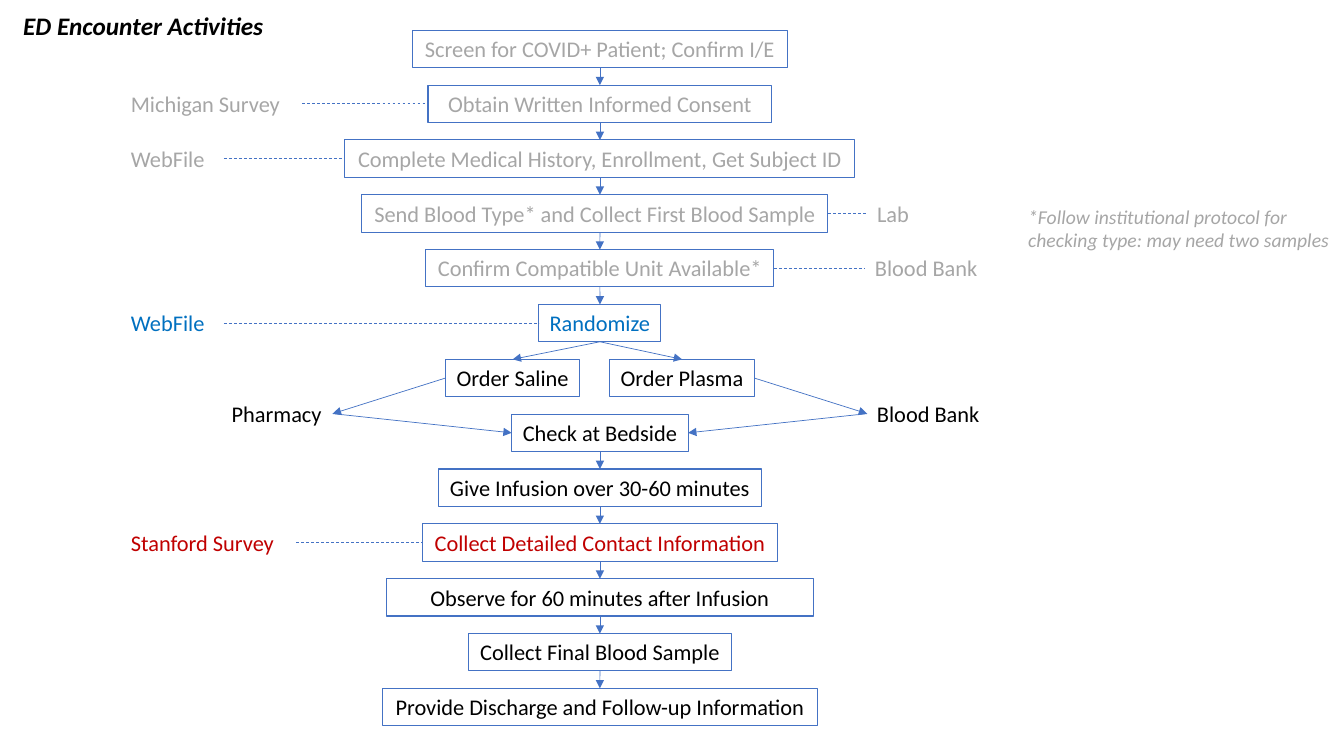
from dataclasses import dataclass
from itertools import pairwise

from lxml.etree import SubElement
from pptx import Presentation
from pptx.dml.color import RGBColor
from pptx.enum.dml import MSO_LINE
from pptx.enum.shapes import MSO_CONNECTOR, MSO_SHAPE
from pptx.enum.text import MSO_ANCHOR, MSO_AUTO_SIZE, PP_ALIGN
from pptx.oxml.ns import qn
from pptx.util import Inches, Pt


@dataclass(frozen=True)
class Theme:
    font: str = "Calibri"
    title_size: int = 18
    body_size: int = 16
    note_size: int = 14
    line: str = "4472C4"
    black: str = "000000"
    grey: str = "A6A6A6"
    blue: str = "0070C0"
    red: str = "C00000"


@dataclass(frozen=True)
class Box:
    left: float
    top: float
    width: float
    height: float

    def lengths(self):
        return [Inches(n) for n in (self.left, self.top, self.width, self.height)]


THEME = Theme()
TOP, LEFT, BOTTOM, RIGHT = range(4)  # connection sites of a rectangle
ROWS = 13
ROW_HEIGHT = 0.37

# Main column: key -> row, width, text, colour
STEPS = {
    "screen": (0, 3.72, "Screen for COVID+ Patient; Confirm I/E", THEME.grey),
    "consent": (1, 3.41, "Obtain Written Informed Consent", THEME.grey),
    "history": (2, 5.06, "Complete Medical History, Enrollment, Get Subject ID", THEME.grey),
    "sample": (3, 4.62, "Send Blood Type* and Collect First Blood Sample", THEME.grey),
    "unit": (4, 3.45, "Confirm Compatible Unit Available*", THEME.grey),
    "randomize": (5, 1.21, "Randomize", THEME.blue),
    "check": (7, 1.75, "Check at Bedside", THEME.black),
    "infusion": (8, 3.21, "Give Infusion over 30-60 minutes", THEME.black),
    "contact": (9, 3.52, "Collect Detailed Contact Information", THEME.red),
    "observe": (10, 4.23, "Observe for 60 minutes after Infusion", THEME.black),
    "final": (11, 2.61, "Collect Final Blood Sample", THEME.black),
    "discharge": (12, 4.31, "Provide Discharge and Follow-up Information", THEME.black),
}
SHIFTS = {"sample": -0.05}  # steps that sit off the axis
# Labels beside a step: step, offset from the chart's left, width, text
SIDE_LABELS = [
    ("consent", 0, 1.8, "Michigan Survey"),
    ("history", 0, 1.02, "WebFile"),
    ("sample", 7.4, 0.52, "Lab"),
    ("unit", 7.38, 1.23, "Blood Bank"),
    ("randomize", 0, 1.02, "WebFile"),
    ("contact", 0, 1.74, "Stanford Survey"),
]
# Two arms: order offset, width, text; supplier offset, width, text; outer side
ORDER_ROW, SUPPLIER_ROW = 6, 6.65
ARMS = [
    ((3.22, 1.33, "Order Saline"), (1.0, 1.1, "Pharmacy"), LEFT),
    ((4.85, 1.43, "Order Plasma"), (7.4, 1.23, "Blood Bank"), RIGHT),
]


def write(shape, text, color, size=THEME.body_size, align=PP_ALIGN.LEFT, wrap=False):
    frame = shape.text_frame
    frame.text = text
    frame.word_wrap = wrap
    frame.auto_size = MSO_AUTO_SIZE.SHAPE_TO_FIT_TEXT
    frame.vertical_anchor = MSO_ANCHOR.TOP
    paragraph = frame.paragraphs[0]
    paragraph.alignment = align
    paragraph.font.name = THEME.font
    paragraph.font.size = Pt(size)
    paragraph.font.color.rgb = RGBColor.from_string(color)
    return paragraph


def add_step(slide, box, text, color):
    shape = slide.shapes.add_shape(MSO_SHAPE.RECTANGLE, *box.lengths())
    shape.shadow.inherit = False
    shape.fill.background()
    shape.line.color.rgb = RGBColor.from_string(THEME.line)
    shape.line.width = Pt(0.75)
    write(shape, text, color, align=PP_ALIGN.CENTER)
    return shape


def add_label(slide, box, text, color):
    label = slide.shapes.add_textbox(*box.lengths())
    write(label, text, color)
    return label


def join(slide, start, start_site, end, end_site, dashed=False, axis=None):
    """Arrow or dashed line; with an axis, shapes off it are met on the axis."""

    def off_axis(shape):
        return axis is not None and abs(shape.left + shape.width / 2 - axis) > Inches(0.02)

    connector = slide.shapes.add_connector(MSO_CONNECTOR.STRAIGHT, 0, 0, 0, 0)
    if off_axis(start):
        connector.begin_x, connector.begin_y = axis, start.top + start.height
    else:
        connector.begin_connect(start, start_site)
    if off_axis(end):
        connector.end_x, connector.end_y = axis, end.top
    else:
        connector.end_connect(end, end_site)
    connector.line.color.rgb = RGBColor.from_string(THEME.line)
    connector.line.width = Pt(0.5)
    properties = connector.element.spPr
    if dashed:
        connector.line.dash_style = MSO_LINE.DASH
    else:
        SubElement(properties.find(qn("a:ln")), qn("a:tailEnd"), type="triangle")
    SubElement(properties, qn("a:effectLst"))


def add_title(slide, box):
    title = slide.shapes.title
    title.left, title.top, title.width, title.height = box.lengths()
    paragraph = write(title, "ED Encounter Activities", THEME.black, THEME.title_size)
    paragraph.font.bold = True
    paragraph.font.italic = True


def add_footnote(slide, box):
    note = slide.shapes.add_textbox(*box.lengths())
    text = "*Follow institutional protocol for checking type: may need two samples"
    write(note, text, THEME.grey, THEME.note_size, wrap=True).font.italic = True


def add_flowchart(slide, area):
    pitch = (area.height - ROW_HEIGHT) / (ROWS - 1)
    axis = Inches(area.left + area.width / 2)

    def cell(row, offset, width):
        return Box(area.left + offset, area.top + row * pitch, width, ROW_HEIGHT)

    # Main column, centred in the area
    steps = {}
    for key, (row, width, text, color) in STEPS.items():
        offset = (area.width - width) / 2 + SHIFTS.get(key, 0)
        steps[key] = add_step(slide, cell(row, offset, width), text, color)
    for above, below in pairwise(steps):
        if above != "randomize":
            join(slide, steps[above], BOTTOM, steps[below], TOP, axis=axis)

    # Side labels with dashed lines
    for key, offset, width, text in SIDE_LABELS:
        row, *_, color = STEPS[key]
        label = add_label(slide, cell(row, offset, width), text, color)
        if offset < area.width / 2:
            join(slide, label, RIGHT, steps[key], LEFT, dashed=True)
        else:
            join(slide, steps[key], RIGHT, label, LEFT, dashed=True)

    # Saline and plasma arms
    for (offset, width, text), (far_offset, far_width, far_text), outer in ARMS:
        order = add_step(slide, cell(ORDER_ROW, offset, width), text, THEME.black)
        supplier = add_label(
            slide, cell(SUPPLIER_ROW, far_offset, far_width), far_text, THEME.black
        )
        inner = LEFT if outer == RIGHT else RIGHT
        join(slide, steps["randomize"], BOTTOM, order, TOP)
        join(slide, order, outer, supplier, inner)
        join(slide, supplier, inner, steps["check"], outer)


def main():
    presentation = Presentation()
    presentation.slide_width = Inches(13.33)
    presentation.slide_height = Inches(7.5)
    slide = presentation.slides.add_slide(presentation.slide_layouts[5])
    add_title(slide, Box(0.13, 0.05, 2.61, 0.4))
    add_flowchart(slide, Box(1.2, 0.3, 9.5, 6.9))
    add_footnote(slide, Box(10.1, 1.98, 3.23, 0.57))
    presentation.save("out.pptx")


if __name__ == "__main__":
    main()
